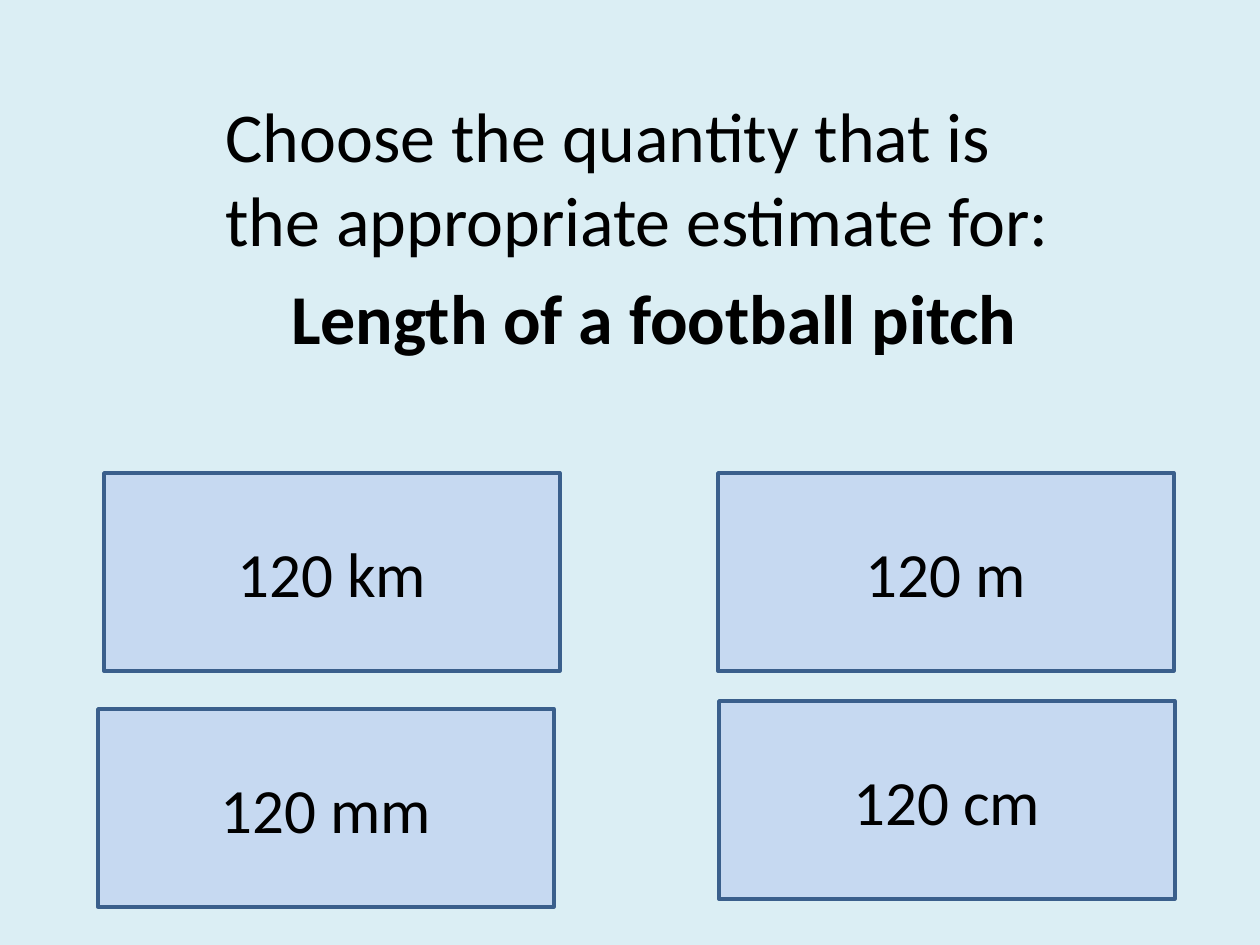
from pptx import Presentation
from pptx import util as u
from pptx.dml.color import RGBColor
from pptx.enum import shapes, text

PX = u.Inches(1) // 126
BACKGROUND = RGBColor(0xDB, 0xEE, 0xF4)
CARD_FILL = RGBColor(0xC6, 0xD9, 0xF1)
CARD_LINE = RGBColor(0x3A, 0x5F, 0x8C)
BLACK = RGBColor(0, 0, 0)
CARD_WIDTH, CARD_HEIGHT = 456, 198


def style_paragraph(para, size, align, bold=False):
    para.alignment = align
    for span in para.runs:
        span.font.name = "Calibri"
        span.font.size = u.Pt(size)
        span.font.bold = bold
        span.font.color.rgb = BLACK


deck = Presentation()
deck.slide_width, deck.slide_height = 1260 * PX, 945 * PX
page = deck.slides.add_slide(deck.slide_layouts[5])
page.background.fill.solid()
page.background.fill.fore_color.rgb = BACKGROUND

# Question
question = page.shapes.title
question.left, question.top = 213 * PX, 86 * PX
question.width, question.height = 882 * PX, 309 * PX
frame = question.text_frame
frame.word_wrap = True
frame.auto_size = text.MSO_AUTO_SIZE.NONE
frame.vertical_anchor = text.MSO_ANCHOR.TOP
frame.text = "Choose the quantity that is the appropriate estimate for:\nLength of a football pitch"
prompt, subject = frame.paragraphs
style_paragraph(prompt, 40, text.PP_ALIGN.LEFT)
style_paragraph(subject, 40, text.PP_ALIGN.CENTER, bold=True)
subject.space_before = u.Pt(8)

# Answer cards: the lower row is slightly out of line with the upper one
answers = [
    ("120 m", 718, 473),
    ("120 km", 104, 473),
    ("120 cm", 719, 701),
    ("120 mm", 98, 709),
]
for answer, left, top in answers:
    card = page.shapes.add_shape(shapes.MSO_SHAPE.RECTANGLE, left * PX, top * PX,
                                 CARD_WIDTH * PX, CARD_HEIGHT * PX)
    card.shadow.inherit = False
    card.fill.solid()
    card.fill.fore_color.rgb = CARD_FILL
    card.line.color.rgb = CARD_LINE
    card.line.width = u.Pt(2)
    card.text_frame.text = answer
    card.text_frame.vertical_anchor = text.MSO_ANCHOR.MIDDLE
    style_paragraph(card.text_frame.paragraphs[0], 36, text.PP_ALIGN.CENTER)

deck.save("out.pptx")
